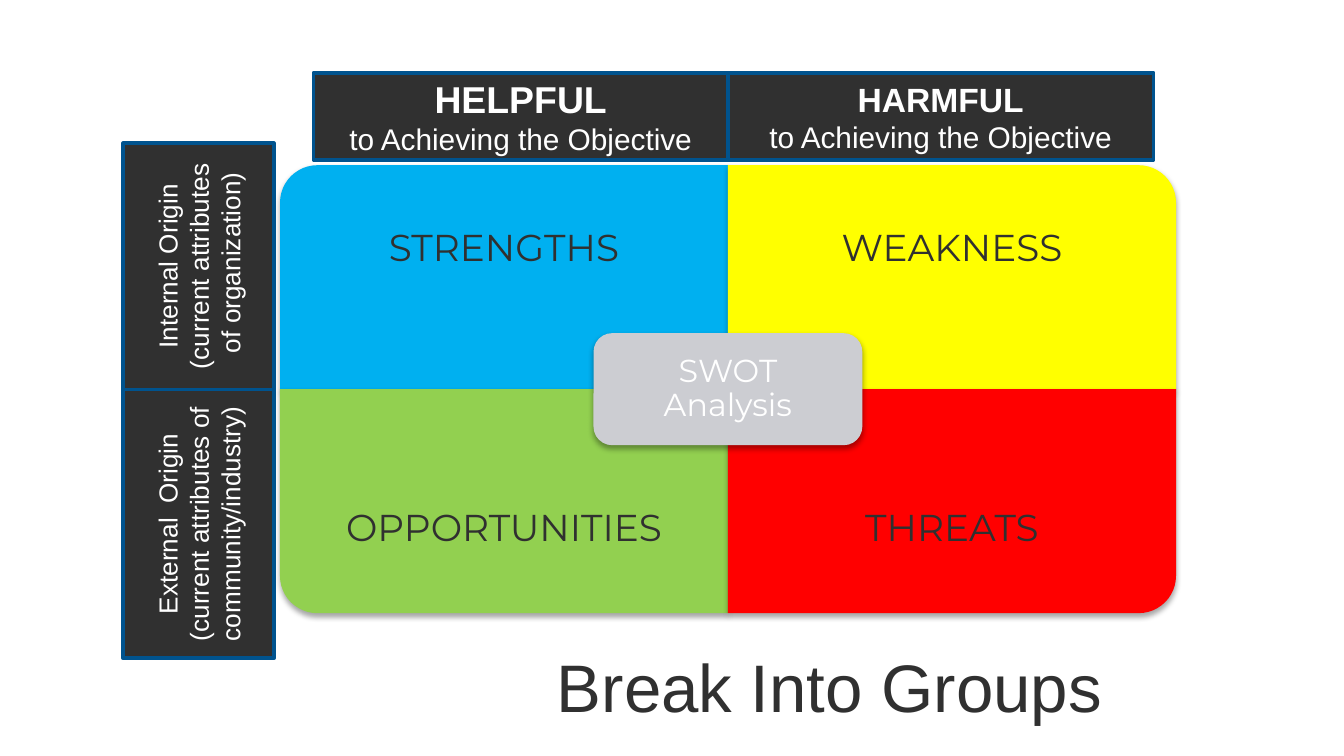
"""Build a SWOT analysis slide with four quadrants, headers and a title."""
import dataclasses

import lxml.etree
import pptx
import pptx.dml.color
import pptx.enum.shapes
import pptx.enum.text
import pptx.oxml.ns
import pptx.util

Pt = pptx.util.Pt
Kind = pptx.enum.shapes.MSO_SHAPE
Text = pptx.enum.text


def tint(code):
    return pptx.dml.color.RGBColor.from_string(code)


@dataclasses.dataclass(frozen=True)
class Theme:
    dark: str = "303030"
    white: str = "FFFFFF"
    edge: str = "00538E"
    blue: str = "00B0F0"
    yellow: str = "FFFF00"
    green: str = "92D050"
    red: str = "FF0000"
    gray: str = "CCCDD2"
    plain: str = "Arial"
    fancy: str = "Montserrat"
    title: int = 36
    label: int = 20
    lead: int = 18
    hub: int = 17
    note: int = 16
    side: int = 14


class Board:
    def __init__(self, slide, theme):
        self.slide = slide
        self.theme = theme
        self.host = slide.shapes

    def group(self):
        self.host = self.slide.shapes.add_group_shape().shapes

    def leave(self):
        self.host = self.slide.shapes

    def fill(self, frame, rows, font, color, pace=None):
        """Fill a frame with centred rows of (text, size, bold)."""
        frame.word_wrap = True
        for spot, (text, size, bold) in enumerate(rows):
            para = frame.add_paragraph() if spot else frame.paragraphs[0]
            para.alignment = Text.PP_ALIGN.CENTER
            if pace:
                para.line_spacing = pace
            for turn, line in enumerate(text.split("\n")):
                if turn:
                    para.add_line_break()
                run = para.add_run()
                run.text = line
                run.font.name = font
                run.font.size = Pt(size)
                run.font.bold = bold
                run.font.color.rgb = tint(color)

    def shape(self, kind, box, color, turn=0):
        """Add a filled shape that covers the box once turned."""
        left, top, wide, high = box
        if turn % 180:
            left, top = left + (wide - high) / 2, top + (high - wide) / 2
            wide, high = high, wide
        item = self.host.add_shape(kind, Pt(left), Pt(top), Pt(wide), Pt(high))
        item.rotation = turn
        item.fill.solid()
        item.fill.fore_color.rgb = tint(color)
        item.line.fill.background()
        item.shadow.inherit = False
        return item

    def panel(self, box, rows, turn=0):
        item = self.shape(Kind.RECTANGLE, box, self.theme.dark, turn)
        item.line.color.rgb = tint(self.theme.edge)
        item.line.width = Pt(2)
        self.fill(item.text_frame, rows, self.theme.plain, self.theme.white)

    def tile(self, kind, box, color, turn=0):
        item = self.shape(kind, box, color, turn)
        name = pptx.oxml.ns.qn
        shade = lxml.etree.SubElement(
            item._element.spPr.find(name("a:effectLst")), name("a:outerShdw"),
            blurRad=str(Pt(3.1)), dist=str(Pt(1.8)), dir="5400000", rotWithShape="0")
        black = lxml.etree.SubElement(shade, name("a:srgbClr"), val="000000")
        lxml.etree.SubElement(black, name("a:alpha"), val="35000")

    def label(self, box, text, size, color, pad):
        frame = self.host.add_textbox(*map(Pt, box)).text_frame
        frame.margin_left = frame.margin_right = Pt(pad)
        frame.margin_top = frame.margin_bottom = Pt(pad)
        frame.vertical_anchor = Text.MSO_ANCHOR.MIDDLE
        self.fill(frame, [(text, size, False)], self.theme.fancy, color, 0.9)

    def title(self, box, text):
        item = self.slide.shapes.title
        item.left, item.top, item.width, item.height = map(Pt, box)
        frame = item.text_frame
        frame.auto_size = Text.MSO_AUTO_SIZE.NONE
        frame.vertical_anchor = Text.MSO_ANCHOR.TOP
        rows = [(text, self.theme.title, False)]
        self.fill(frame, rows, self.theme.plain, self.theme.dark)


def main():
    deck = pptx.Presentation()
    deck.slide_width, deck.slide_height = Pt(720), Pt(405)
    look = Theme()
    board = Board(deck.slides.add_slide(deck.slide_layouts[5]), look)
    board.title((225.4, 342, 438, 51), "Break Into Groups")

    sides = [
        (76.7, 132, "Internal Origin", "(current attributes\n of organization)"),
        (208.7, 144, "External  Origin", "(current attributes of community/industry)"),
    ]
    for top, high, head, note in sides:
        rows = [(text, look.side, False) for text in (head, note)]
        board.panel((66, top, 80.7, high), rows, 270)

    left, top, wide, high, tall = 150, 88.5, 240, 120, 90
    quads = [
        (0, 0, "STRENGTHS", look.blue, 270),
        (1, 0, "WEAKNESS", look.yellow, 0),
        (0, 1, "OPPORTUNITIES", look.green, 180),
        (1, 1, "THREATS", look.red, 90),
    ]
    board.group()
    for col, row, text, color, turn in quads:
        x, y = left + col * wide, top + row * high
        board.tile(Kind.ROUND_1_RECTANGLE, (x, y, wide, high), color, turn)
        spot = (x, y + row * (high - tall), wide, tall)
        board.label(spot, text, look.label, look.dark, 11.4)
    mid, base = left + wide, top + high
    board.tile(Kind.ROUNDED_RECTANGLE, (mid - 72, base - 30, 144, 60), look.gray)
    board.label((mid - 69, base - 27, 138, 54), "SWOT\nAnalysis", look.hub, look.white, 5)
    board.leave()

    heads = [(168, 222, "HELPFUL", look.label), (mid, 228, "HARMFUL", look.lead)]
    for x, span, text, size in heads:
        rows = [(text, size, True), ("to Achieving the Objective", look.note, False)]
        board.panel((x, 39, span, 46.8), rows)
    deck.save("out.pptx")


if __name__ == "__main__":
    main()
